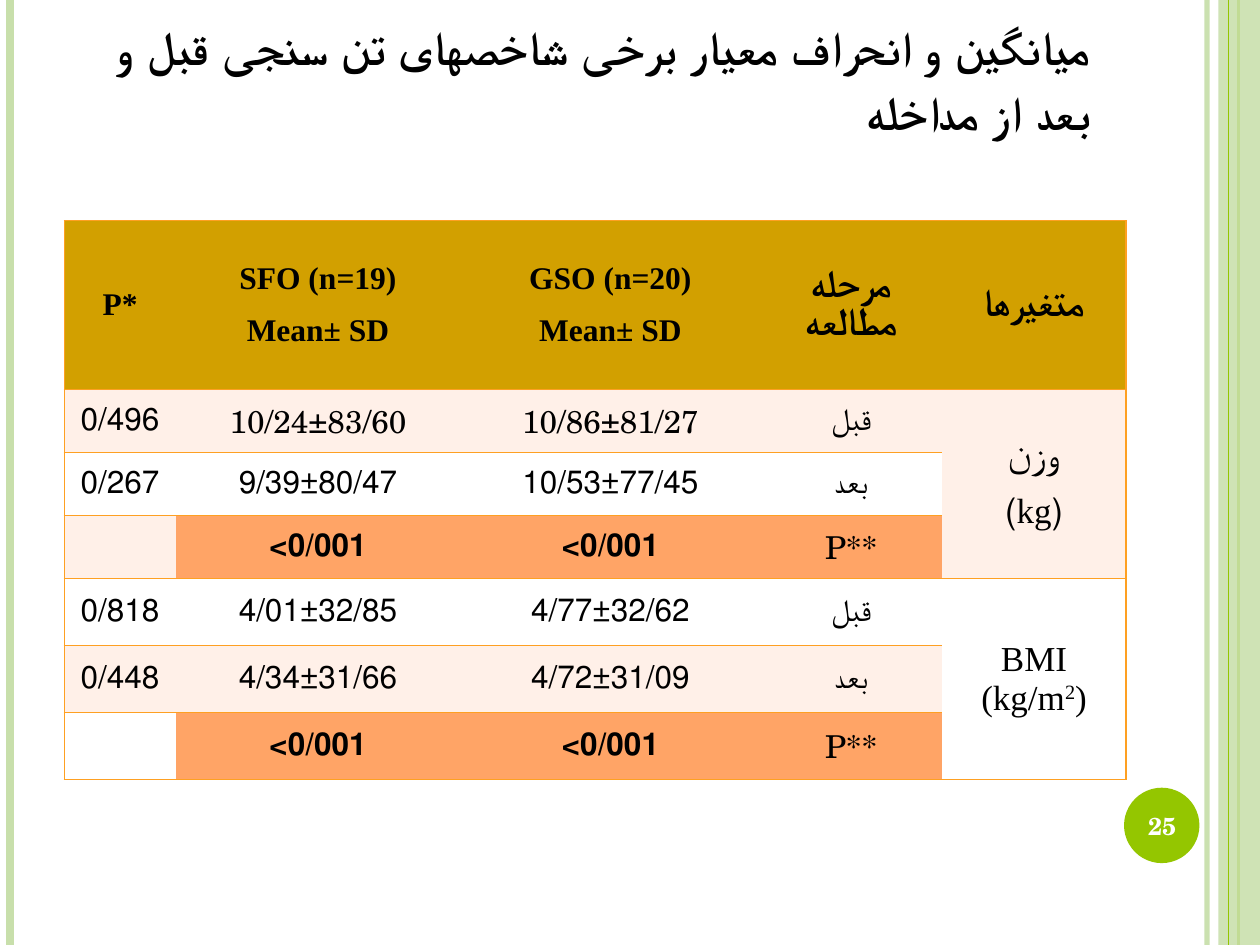
from dataclasses import dataclass

from lxml import etree
from pptx import Presentation
from pptx import util as u
from pptx.dml.color import RGBColor
from pptx.enum import shapes, text
from pptx.oxml.ns import qn


@dataclass(frozen=True)
class Theme:
    black: str = "000000"
    white: str = "FFFFFF"
    pale_green: str = "C8DFAB"
    green: str = "94C600"
    gold: str = "D2A000"
    cream: str = "FFF0E8"
    salmon: str = "FFA466"
    border: str = "FEA022"
    serif: str = "Times New Roman"
    body: str = "TeX Gyre Schola"
    title_size: float = 27
    label_size: float = 22
    unit_size: float = 20
    cell_size: float = 18
    number_size: float = 14


THEME = Theme()
NO_STYLE = "{2D5ABB26-0587-4C30-8999-92F81FD0307C}"
COLUMNS = [2.24, 5.74, 6.05, 3.66, 3.71]
ROWS = [3.4] + [1.27] * 3 + [1.35] * 3
MEASURES = [
    ["0/496", "10/24±83/60", "10/86±81/27", "قبل"],
    ["0/267", "9/39±80/47", "10/53±77/45", "بعد"],
    ["", "0/001>", "0/001>", "P**"],
    ["0/818", "4/01±32/85", "4/77±32/62", "قبل"],
    ["0/448", "4/34±31/66", "4/72±31/09", "بعد"],
    ["", "0/001>", "0/001>", "P**"],
]


@dataclass
class Line:
    text: str
    size: float = THEME.cell_size
    font: str = THEME.body
    bold: bool = False
    rtl: bool = False


def rgb(color):
    return RGBColor.from_string(color)


def set_opacity(fill_parent, percent):
    color = next(fill_parent.iter(qn("a:srgbClr")))
    etree.SubElement(color, qn("a:alpha")).set("val", str(percent * 1000))


def add_rule(page, left, width, color, opacity=100):
    rule = page.shapes.add_connector(
        shapes.MSO_CONNECTOR.STRAIGHT, u.Cm(left), 0, u.Cm(left), u.Cm(19.05))
    rule.line.width = u.Pt(width)
    rule.line.color.rgb = rgb(color)
    properties = rule._element.spPr
    if opacity < 100:
        set_opacity(properties, opacity)
    etree.SubElement(properties, qn("a:effectLst"))


def add_plain_shape(page, kind, frame, color, opacity=100):
    shape = page.shapes.add_shape(kind, *map(u.Cm, frame))
    shape.shadow.inherit = False
    shape.fill.solid()
    shape.fill.fore_color.rgb = rgb(color)
    shape.line.fill.background()
    if opacity < 100:
        set_opacity(shape._element.spPr, opacity)


def format_paragraph(para, line, color=THEME.black, align=text.PP_ALIGN.CENTER):
    para.alignment = align
    if line.rtl:
        para._p.get_or_add_pPr().set("rtl", "1")
    para.font.size = u.Pt(line.size)
    para.font.name = line.font
    para.font.bold = line.bold
    para.font.color.rgb = rgb(color)


def add_title(page, wording):
    title = page.shapes.title
    title.left, title.top, title.width, title.height = map(u.Cm, (1.5, 0.91, 20.75, 3.18))
    frame = title.text_frame
    frame.auto_size = text.MSO_AUTO_SIZE.NONE
    frame.vertical_anchor = text.MSO_ANCHOR.BOTTOM
    para = frame.paragraphs[0]
    para.line_spacing = 1.15
    para.space_after = u.Pt(10)
    line = Line(wording, THEME.title_size, THEME.serif, bold=True, rtl=True)
    format_paragraph(para, line, align=text.PP_ALIGN.RIGHT)
    span = para.add_run()
    span.text = line.text
    span.font._element.set("cap", "small")
    para.add_line_break()


def add_page_number(page, number):
    box = page.shapes.add_textbox(*map(u.Cm, (22.58, 15.93, 1.7, 1.45)))
    frame = box.text_frame
    frame.word_wrap = True
    frame.vertical_anchor = text.MSO_ANCHOR.MIDDLE
    para = frame.paragraphs[0]
    para.text = number
    format_paragraph(para, Line(number, THEME.number_size, bold=True), THEME.white)


def set_borders(cell, sides):
    properties = cell._tc.get_or_add_tcPr()
    for position, side in enumerate(sides):
        border = etree.Element(qn(f"a:ln{side}"), w=str(u.Pt(1)))
        fill = etree.SubElement(border, qn("a:solidFill"))
        etree.SubElement(fill, qn("a:srgbClr")).set("val", THEME.border)
        properties.insert(position, border)


def fill_cell(cell, lines, color):
    cell.fill.solid()
    cell.fill.fore_color.rgb = rgb(color)
    cell.vertical_anchor = text.MSO_ANCHOR.MIDDLE
    cell.margin_left = cell.margin_right = u.Cm(0.13)
    cell.margin_top = cell.margin_bottom = 0
    frame = cell.text_frame
    for index, line in enumerate(lines):
        para = frame.add_paragraph() if index else frame.paragraphs[0]
        para.text = line.text
        para.space_after = u.Pt(10)
        format_paragraph(para, line)


def fill_header(table):
    def latin(wording):
        return Line(wording, THEME.cell_size, THEME.serif, bold=True)

    def persian(wording):
        return Line(wording, THEME.label_size, bold=True)

    headings = [
        [latin("P*")],
        [latin("SFO (n=19)"), latin("Mean± SD")],
        [latin("GSO (n=20)"), latin("Mean± SD")],
        [persian("مرحله مطالعه")],
        [persian("متغیرها")],
    ]
    for column, lines in enumerate(headings):
        fill_cell(table.cell(0, column), lines, THEME.gold)


def fill_measures(table):
    for row, values in enumerate(MEASURES, start=1):
        band = THEME.cream if row % 2 else THEME.white
        is_test = values[-1] == "P**"
        for column, value in enumerate(values):
            rtl = column == 0 or (column < 3 and row > 1)
            line = Line(value, bold=is_test and column in (1, 2), rtl=rtl)
            color = THEME.salmon if is_test and column else band
            fill_cell(table.cell(row, column), [line], color)


def fill_variables(table):
    weight, index = table.cell(1, 4), table.cell(4, 4)
    weight.merge(table.cell(3, 4))
    index.merge(table.cell(6, 4))
    fill_cell(weight, [Line("وزن", THEME.label_size, rtl=True),
                       Line("(kg)", THEME.unit_size, THEME.serif, rtl=True)], THEME.cream)
    fill_cell(index, [Line("BMI (kg/m", THEME.unit_size, THEME.serif)], THEME.white)
    para = index.text_frame.paragraphs[0]
    power, closing = para.add_run(), para.add_run()
    power.text, closing.text = "2", ")"
    power.font._element.set("baseline", "30000")


def add_results_table(page):
    frame = page.shapes.add_table(
        len(ROWS), len(COLUMNS), u.Cm(1.3), u.Cm(4.45), u.Cm(sum(COLUMNS)), u.Cm(sum(ROWS)))
    table = frame.table
    table._tbl.tblPr.find(qn("a:tableStyleId")).text = NO_STYLE
    for column, width in zip(table.columns, COLUMNS):
        column.width = u.Cm(width)
    for row, height in zip(table.rows, ROWS):
        row.height = u.Cm(height)
    fill_header(table)
    fill_measures(table)
    fill_variables(table)
    outer_sides = {0: "LTB", len(COLUMNS) - 1: "RTB"}
    for row in range(len(ROWS)):
        for column in range(len(COLUMNS)):
            cell = table.cell(row, column)
            if not cell.is_spanned:
                set_borders(cell, outer_sides.get(column, "TB"))


def main():
    deck = Presentation()
    deck.slide_width, deck.slide_height = u.Cm(25.4), u.Cm(19.05)
    page = deck.slides.add_slide(deck.slide_layouts[5])
    add_rule(page, 24.33, 3, THEME.pale_green, 93)
    add_rule(page, 0.2, 4.5, THEME.pale_green)
    add_rule(page, 24.97, 1.5, THEME.green)
    add_plain_shape(page, shapes.MSO_SHAPE.RECTANGLE, (24.56, 0, 0.84, 19.05), THEME.pale_green, 87)
    add_rule(page, 24.77, 0.75, THEME.green)
    add_plain_shape(page, shapes.MSO_SHAPE.OVAL, (22.66, 15.88, 1.52, 1.52), THEME.green)
    add_title(page, "میانگین و انحراف معیار برخی شاخصهای تن سنجی قبل و بعد از مداخله")
    add_results_table(page)
    add_page_number(page, "25")
    deck.save("out.pptx")


if __name__ == "__main__":
    main()
